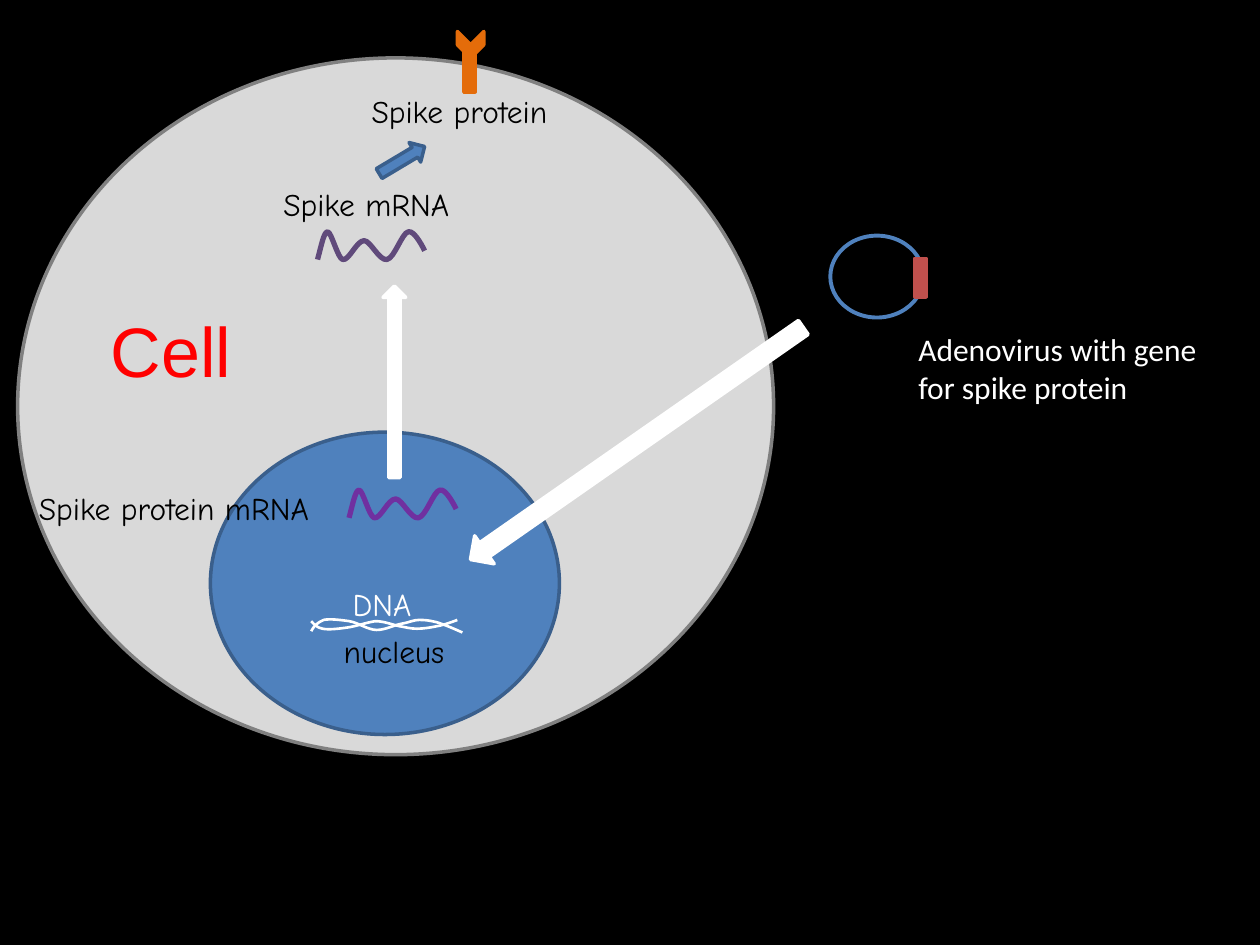
"""Draw how an adenovirus gene leads a cell to make spike protein."""
from pptx import Presentation
from pptx.dml.color import RGBColor
from pptx.enum.shapes import MSO_SHAPE as Preset
from pptx.enum.text import MSO_AUTO_SIZE as AutoSize
from pptx.oxml.ns import qn
from pptx.util import Inches, Pt

BLUE, DARK_BLUE, ORANGE, RED, WHITE, BLACK = (
    "4F81BD", "3A5F8C", "E46C0A", "C0504D", "FFFFFF", "000000")
HAND, PLAIN = "Comic Neue", "Calibri"

CELL = [
    (Preset.OVAL, (0.14, 0.46, 6, 5.53), 0, "D9D9D9", "808080", 2),
    (Preset.OVAL, (1.67, 3.43, 2.77, 2.4), 0, BLUE, DARK_BLUE, 2),
]
SPIKE = [
    (Preset.RECTANGLE, (3.56, 0.52, 0.33, 0.09), 90, ORANGE, ORANGE, 2),
    (Preset.CHEVRON, (3.63, 0.25, 0.21, 0.21), 90, ORANGE, ORANGE, 2),
]
INWARD_ARROWS = [
    (Preset.RIGHT_ARROW, (2.98, 1.18, 0.42, 0.18), 329.2, BLUE, DARK_BLUE, 2),
    (Preset.DOWN_ARROW, (4.92, 1.91, 0.27, 3.22), 55.1, WHITE, WHITE, 2),
]
VIRUS = [
    (Preset.OVAL, (6.59, 1.87, 0.74, 0.65), 0, None, BLUE, 2.25),
    (Preset.RECTANGLE, (7.26, 2.05, 0.09, 0.31), 0, RED, RED, 2),
]
OUTWARD_ARROW = [(Preset.DOWN_ARROW, (3.04, 2.27, 0.18, 1.52), 180, WHITE, WHITE, 2)]

MRNA_WAVE = [
    (0, 0.22), (0.03, 0.11), (0.05, 0), (0.08, 0), (0.11, 0), (0.16, 0.21),
    (0.2, 0.22), (0.25, 0.23), (0.31, 0.07), (0.37, 0.07), (0.42, 0.07),
    (0.49, 0.23), (0.55, 0.22), (0.61, 0.21), (0.67, 0.01), (0.72, 0),
    (0.77, -0.02), (0.85, 0.15), (0.85, 0.15)]
DNA_LOWER = [
    (0, 0.02), (0.02, 0.04), (0.04, 0.07), (0.09, 0.08), (0.14, 0.09),
    (0.22, 0.08), (0.29, 0.07), (0.36, 0.06), (0.44, 0.03), (0.51, 0.02),
    (0.58, 0.02), (0.65, 0.05), (0.7, 0.06), (0.76, 0.07), (0.79, 0.08),
    (0.84, 0.08), (0.89, 0.08), (0.95, 0.07), (1, 0.06), (1.06, 0.05),
    (1.16, 0.01), (1.16, 0.01)]
DNA_UPPER = [
    (0, 0.1), (0.02, 0.06), (0.05, 0.03), (0.1, 0.01), (0.15, 0),
    (0.23, 0.01), (0.3, 0.02), (0.37, 0.03), (0.45, 0.09), (0.52, 0.09),
    (0.59, 0.09), (0.66, 0.05), (0.72, 0.04), (0.78, 0.03), (0.81, 0.01),
    (0.86, 0.01), (0.91, 0.01), (0.98, 0.02), (1.03, 0.04), (1.09, 0.06),
    (1.2, 0.11), (1.2, 0.11)]

DNA = [(DNA_LOWER, 2.47, 4.91, WHITE, 1.5), (DNA_UPPER, 2.47, 4.91, WHITE, 1.5)]
MRNA = [(MRNA_WAVE, 2.77, 3.89, "7030A0", 3), (MRNA_WAVE, 2.52, 1.84, "604A7B", 3)]

CELL_LABEL = [("Cell", (0.78, 2.39, 1.17, 0.77), False, 40, "Arial", "FF0000")]
DNA_LABEL = [("DNA", (2.7, 4.59, 0.77, 0.4), False, 18, HAND, WHITE)]
PROTEIN_LABELS = [
    ("nucleus", (2.63, 4.97, 2.37, 0.4), True, 18, HAND, BLACK),
    ("Spike protein mRNA", (0.21, 3.83, 2.6, 0.4), False, 18, HAND, BLACK),
    ("Spike mRNA", (2.15, 1.42, 1.67, 0.4), False, 18, HAND, BLACK),
    ("Spike protein", (2.85, 0.68, 1.78, 0.4), False, 18, HAND, BLACK),
]
VIRUS_LABEL = [("Adenovirus with gene\nfor spike protein", (7.19, 2.57, 2.5, 0.71),
                False, 18, PLAIN, WHITE)]


def paint(color_format, color):
    color_format.rgb = RGBColor.from_string(color)


def style(shape, fill, line, width):
    shape.shadow.inherit = False
    if fill:
        shape.fill.solid()
        paint(shape.fill.fore_color, fill)
    else:
        shape.fill.background()
    paint(shape.line.color, line)
    shape.line.width = Pt(width)


def add_preset(shapes, preset, box, rotation, *look):
    shape = shapes.add_shape(preset, *map(Inches, box))
    shape.rotation = rotation
    style(shape, *look)


def add_strand(shapes, points, left, top, line, width):
    start, *rest = [(Inches(left + x), Inches(top + y)) for x, y in points]
    builder = shapes.build_freeform(*start)
    builder.add_line_segments(rest, close=False)
    shape = builder.convert_to_shape()
    segments = list(shape.element.iter(qn("a:lnTo")))
    for curve, *others in zip(segments[::3], segments[1::3], segments[2::3]):
        curve.tag = qn("a:cubicBezTo")
        for other in others:
            curve.append(other[0])
            other.getparent().remove(other)
    style(shape, None, line, width)


def add_label(shapes, text, box, wrap, size, font, color):
    frame = shapes.add_textbox(*map(Inches, box)).text_frame
    frame.text = text
    frame.word_wrap = wrap
    frame.auto_size = AutoSize.SHAPE_TO_FIT_TEXT
    for paragraph in frame.paragraphs:
        paragraph.font.size = Pt(size)
        paragraph.font.name = font
        paint(paragraph.font.color, color)


LAYERS = [
    (add_preset, CELL, False), (add_label, CELL_LABEL, False),
    (add_strand, DNA, True), (add_label, DNA_LABEL, False),
    (add_strand, MRNA, False), (add_label, PROTEIN_LABELS, False),
    (add_preset, SPIKE, True), (add_preset, INWARD_ARROWS, False),
    (add_preset, VIRUS, True), (add_label, VIRUS_LABEL, False),
    (add_preset, OUTWARD_ARROW, False),
]


def main():
    presentation = Presentation()
    presentation.slide_width, presentation.slide_height = Inches(10), Inches(7.5)
    slide = presentation.slides.add_slide(presentation.slide_layouts[6])
    slide.background.fill.solid()
    paint(slide.background.fill.fore_color, BLACK)
    for add_part, parts, grouped in LAYERS:
        shapes = slide.shapes.add_group_shape().shapes if grouped else slide.shapes
        for part in parts:
            add_part(shapes, *part)
    presentation.save("out.pptx")


if __name__ == "__main__":
    main()
